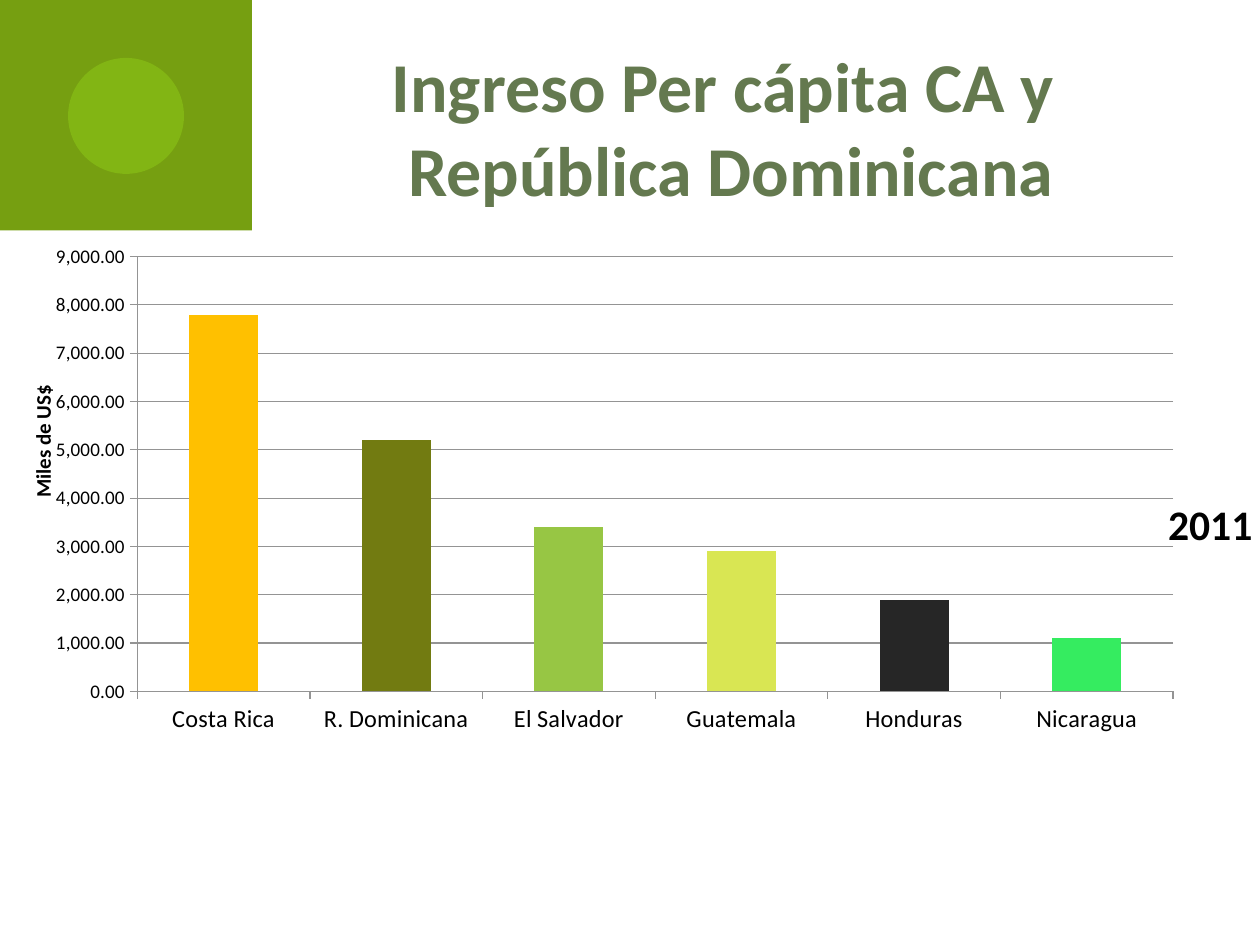
from lxml import etree
from pptx import Presentation
from pptx.chart.data import CategoryChartData
from pptx.dml.color import RGBColor
from pptx.enum import chart as ch, shapes, text
from pptx.oxml import parse_xml
from pptx.oxml.ns import nsdecls, qn
from pptx.util import Inches, Pt

# Content
HEADING = ["Ingreso Per cápita CA y ", "República Dominicana"]
YEAR = "2011"
AXIS_LABEL = "Miles de US$"
INCOME = [
    ("Costa Rica", 7800, "FFC000"),
    ("R. Dominicana", 5200, "727B11"),
    ("El Salvador", 3400, "97C644"),
    ("Guatemala", 2900, "D9E653"),
    ("Honduras", 1900, "262626"),
    ("Nicaragua", 1100, "35EC60"),
]
FONT = "Calibri"
GRID = "949494"


def rgb(value):
    return RGBColor.from_string(value)


def style(font, size, color="000000", bold=False):
    font.name, font.size, font.bold = FONT, Pt(size), bold
    font.color.rgb = rgb(color)


def write(frame, lines, align=text.PP_ALIGN.CENTER, **fmt):
    for i, line in enumerate(lines):
        paragraph = frame.paragraphs[0] if i == 0 else frame.add_paragraph()
        paragraph.alignment = align
        run = paragraph.add_run()
        run.text = line
        style(run.font, **fmt)


def add_block(slide, kind, box, color, opacity=100):
    block = slide.shapes.add_shape(kind, *map(Inches, box))
    block.shadow.inherit = False
    block.fill.solid()
    block.fill.fore_color.rgb = rgb(color)
    block.line.fill.background()
    if opacity < 100:
        fill = block.fill._xPr.find(qn("a:solidFill"))
        etree.SubElement(fill[0], qn("a:alpha")).set("val", str(opacity * 1000))


def manual_layout(x, y, w=None, h=None):
    inner = '<c:layoutTarget val="inner"/>' if w else ""
    modes = '<c:xMode val="edge"/><c:yMode val="edge"/>'
    sizes = f'<c:w val="{w}"/><c:h val="{h}"/>' if w else ""
    return parse_xml(
        f'<c:layout {nsdecls("c")}><c:manualLayout>{inner}{modes}'
        f'<c:x val="{x}"/><c:y val="{y}"/>{sizes}</c:manualLayout></c:layout>')


def place(element, layout, after=None):
    for old in element.findall(qn("c:layout")):
        element.remove(old)
    if after is None:
        element.insert(0, layout)
    else:
        element.find(qn(after)).addnext(layout)


prs = Presentation()
prs.slide_width, prs.slide_height = Inches(10), Inches(7.5)
slide = prs.slides.add_slide(prs.slide_layouts[5])

# Corner emblem
add_block(slide, shapes.MSO_SHAPE.RECTANGLE, (0, 0, 2, 1.83), "769F11")
add_block(slide, shapes.MSO_SHAPE.OVAL, (0.54, 0.46, 0.92, 0.92), "8FCB17", opacity=50)

# Heading
heading = slide.shapes.title
heading.left, heading.top, heading.width, heading.height = map(Inches, (2.98, 0.29, 5.64, 1.45))
frame = heading.text_frame
frame.word_wrap = False
frame.auto_size = text.MSO_AUTO_SIZE.SHAPE_TO_FIT_TEXT
frame.vertical_anchor = text.MSO_ANCHOR.TOP
write(frame, HEADING, size=40, color="64794F", bold=True)

# Income chart
data = CategoryChartData(number_format="#,##0.00")
data.categories = [country for country, _, _ in INCOME]
data.add_series("Series 1", [value for _, value, _ in INCOME])
chart = slide.shapes.add_chart(
    ch.XL_CHART_TYPE.COLUMN_CLUSTERED,
    *map(Inches, (0, 1.86, 10, 5.04)), data).chart
style(chart.font, 10)
chart.has_legend = False
chart._chartSpace.find(qn("c:chart")).addnext(parse_xml(
    f'<c:spPr {nsdecls("c", "a")}><a:solidFill><a:srgbClr val="FFFFFF"/></a:solidFill>'
    '<a:ln><a:noFill/></a:ln></c:spPr>'))
plot = chart.plots[0]
plot.gap_width = 150
plot.vary_by_categories = False
place(chart._chartSpace.chart.plotArea, manual_layout(0.11, 0.035, 0.83, 0.685))

# Bars
bars = plot.series[0]
bars.format.fill.solid()
bars.format.fill.fore_color.rgb = rgb("8FCB17")
for i, (_, _, color) in enumerate(INCOME):
    fill = bars.points[i].format.fill
    fill.solid()
    fill.fore_color.rgb = rgb(color)

# Year beside the plot
chart.has_title = True
year = chart.chart_title
write(year.text_frame, [YEAR], size=24, bold=True)
year.include_in_layout = True
place(year._element, manual_layout(0.93, 0.4), after="c:tx")
year._element.find(qn("c:overlay")).set("val", "1")

# Axes
countries, dollars = chart.category_axis, chart.value_axis
for axis, size in ((countries, 14), (dollars, 11)):
    style(axis.tick_labels.font, size)
    axis.major_tick_mark = ch.XL_TICK_MARK.OUTSIDE
    axis.minor_tick_mark = ch.XL_TICK_MARK.NONE
    axis.format.line.color.rgb = rgb(GRID)
countries.has_major_gridlines = False
dollars.has_major_gridlines = True
dollars.major_gridlines.format.line.color.rgb = rgb(GRID)
dollars.minimum_scale, dollars.maximum_scale, dollars.major_unit = 0, 9000, 1000
dollars.tick_labels.number_format = "#,##0.00"
dollars.tick_labels.number_format_is_linked = False
dollars.has_title = True
label = dollars.axis_title
write(label.text_frame, [AXIS_LABEL], size=12, bold=True)
label.text_frame._txBody.bodyPr.set("rot", "-5400000")
label.text_frame._txBody.bodyPr.set("vert", "horz")
place(label._element, manual_layout(0.02, 0.23), after="c:tx")

prs.save("out.pptx")
